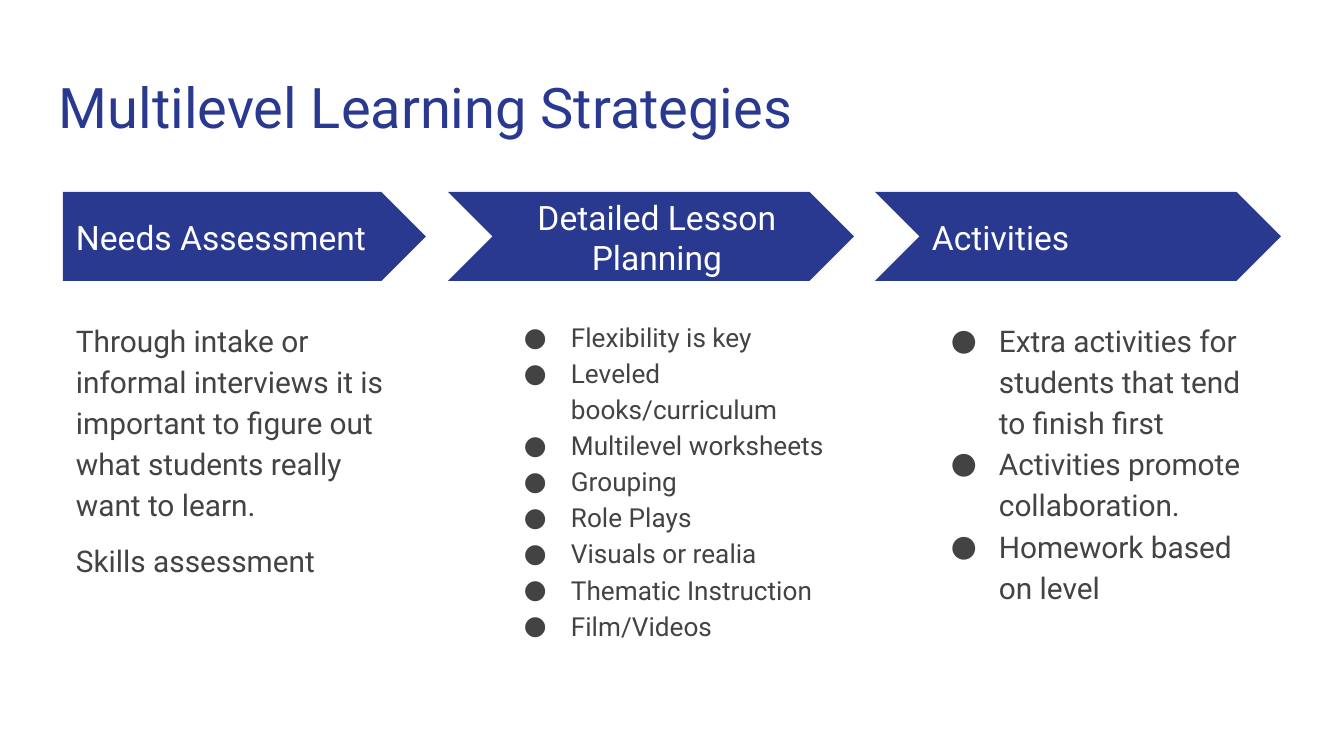
import pptx
import pptx.dml.color
import pptx.enum.shapes
import pptx.enum.text
import pptx.oxml
import pptx.oxml.ns
import pptx.util

SCALE = 914400 / 134.4
BLUE, WHITE, GREY = "2A3990", "FFFFFF", "434343"
FONT = "Roboto"
SHAPE = pptx.enum.shapes.MSO_SHAPE
ALIGN = pptx.enum.text.PP_ALIGN
ANCHOR = pptx.enum.text.MSO_ANCHOR

TITLE = "Multilevel Learning Strategies"
# arrow and text hold (left, width); indent is the bullet's hanging indent
COLUMNS = [
    {"heading": "Needs Assessment", "align": ALIGN.LEFT, "shape": SHAPE.PENTAGON,
     "arrow": (63, 363), "text_left": 63, "size": 16, "indent": 0,
     "lines": ["Through intake or informal interviews it is important to "
               "figure out what students really want to learn.",
               "Skills assessment"]},
    {"heading": "Detailed Lesson Planning", "align": ALIGN.CENTER, "shape": SHAPE.CHEVRON,
     "arrow": (448, 406), "text_left": 491, "size": 14, "indent": 47,
     "lines": ["Flexibility is key", "Leveled books/curriculum",
               "Multilevel worksheets", "Grouping", "Role Plays",
               "Visuals or realia", "Thematic Instruction", "Film/Videos"]},
    {"heading": "Activities", "align": ALIGN.LEFT, "shape": SHAPE.CHEVRON,
     "arrow": (875, 406), "text_left": 919, "size": 16, "indent": 48,
     "lines": ["Extra activities for students that tend to finish first",
               "Activities promote collaboration.",
               "Homework based on level"]},
]
ARROW_TOP, ARROW_HEIGHT = 192, 89
HEADING_TOP, HEADING_WIDTH, HEADING_HEIGHT = 214, 332, 46
BODY_TOP, BODY_WIDTH, BODY_HEIGHT = 304, 363, 390
INSET, BULLET_LEFT = 13, 67


def emu(pixels):
    return pptx.util.Emu(round(pixels * SCALE))


def rgb(value):
    return pptx.dml.color.RGBColor.from_string(value)


def set_all(target, values):
    for name, value in values.items():
        setattr(target, name, value)


def add_bullet(para, indent):
    properties = para._p.get_or_add_pPr()
    properties.set("marL", str(emu(BULLET_LEFT)))
    properties.set("indent", str(-emu(indent)))
    namespace = pptx.oxml.ns.nsdecls("a")
    for xml in (f'<a:buClr {namespace}><a:srgbClr val="{GREY}"/></a:buClr>',
                f'<a:buFont {namespace} typeface="{FONT}"/>',
                f'<a:buChar {namespace} char="●"/>'):
        properties.append(pptx.oxml.parse_xml(xml))


def add_text(slide, place, lines, size, color, anchor=ANCHOR.TOP, indent=0, **para_format):
    """Add a text box with one paragraph per line, bulleted if indent is set."""
    frame = slide.shapes.add_textbox(*map(emu, place)).text_frame
    set_all(frame, {"word_wrap": True, "vertical_anchor": anchor})
    set_all(frame, {f"margin_{side}": emu(INSET)
                    for side in ("left", "top", "right", "bottom")})
    for index, line in enumerate(lines):
        para = frame.paragraphs[0] if index == 0 else frame.add_paragraph()
        set_all(para, para_format)
        if indent:
            add_bullet(para, indent)
        elif index:
            para.space_before = pptx.util.Pt(8)
        span = para.add_run()
        span.text = line
        set_all(span.font, {"name": FONT, "size": pptx.util.Pt(size)})
        span.font.color.rgb = rgb(color)


def add_column(slide, column):
    left, width = column["arrow"]
    arrow = slide.shapes.add_shape(
        column["shape"], *map(emu, (left, ARROW_TOP, width, ARROW_HEIGHT)))
    arrow.shadow.inherit = False
    arrow.fill.solid()
    arrow.fill.fore_color.rgb = rgb(BLUE)
    arrow.line.fill.background()
    text_left = column["text_left"]
    add_text(slide, (text_left, HEADING_TOP, HEADING_WIDTH, HEADING_HEIGHT),
             [column["heading"]], 18, WHITE, ANCHOR.MIDDLE, alignment=column["align"])
    add_text(slide, (text_left, BODY_TOP, BODY_WIDTH, BODY_HEIGHT), column["lines"],
             column["size"], GREY, indent=column["indent"], line_spacing=1.15)


def main():
    deck = pptx.Presentation()
    set_all(deck, {"slide_width": emu(1344), "slide_height": emu(756)})
    slide = deck.slides.add_slide(deck.slide_layouts[6])
    add_text(slide, (46, 60, 1253, 89), [TITLE], 30, BLUE)
    for column in COLUMNS:
        add_column(slide, column)
    deck.save("out.pptx")


if __name__ == "__main__":
    main()
